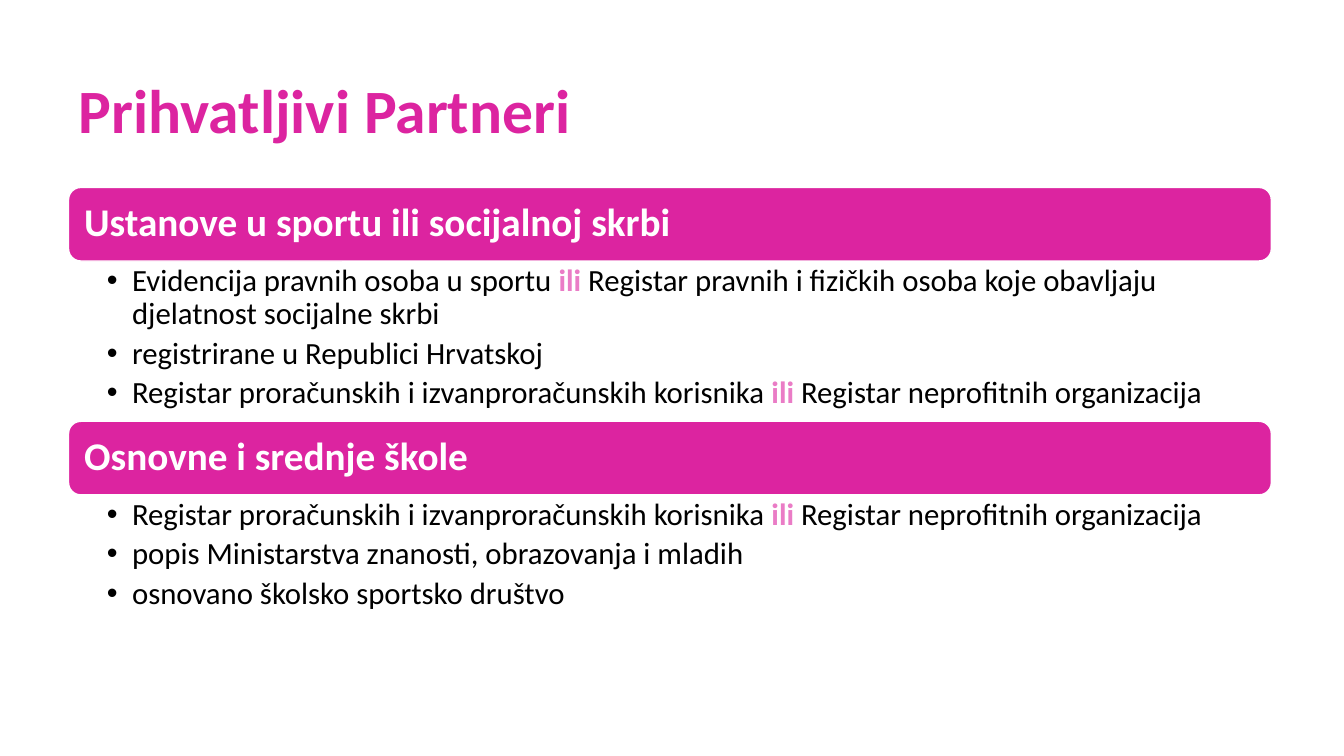
from dataclasses import dataclass

from lxml.etree import SubElement
from pptx import Presentation
from pptx.dml.color import RGBColor
from pptx.enum.shapes import MSO_SHAPE
from pptx.enum.text import MSO_ANCHOR, MSO_AUTO_SIZE, PP_ALIGN
from pptx.oxml.ns import qn
from pptx.shapes.base import BaseShape
from pptx.slide import Slide
from pptx.text.text import TextFrame, _Paragraph, _Run
from pptx.util import Inches, Pt


@dataclass(frozen=True)
class Theme:
    font: str = "Calibri"
    pink: RGBColor = RGBColor(0xDC, 0x24, 0xA0)
    light: RGBColor = RGBColor(0xEA, 0x7C, 0xC6)
    white: RGBColor = RGBColor(0xFF, 0xFF, 0xFF)
    black: RGBColor = RGBColor(0, 0, 0)
    title: int = 44
    head: int = 28
    body: int = 22


@dataclass(frozen=True)
class Group:
    head: str
    items: tuple[str, ...]
    top: float
    height: float


THEME = Theme()
LEFT, WIDTH, BAR = 0.68, 11.93, 0.73
WORD = "ili"
FUNDS = ("Registar proračunskih i izvanproračunskih korisnika ili "
         "Registar neprofitnih organizacija")
GROUPS = (
    Group("Ustanove u sportu ili socijalnoj skrbi", (
        "Evidencija pravnih osoba u sportu ili Registar pravnih i fizičkih "
        "osoba koje obavljaju djelatnost socijalne skrbi",
        "registrirane u Republici Hrvatskoj",
        FUNDS,
    ), 1.86, 1.58),
    Group("Osnovne i srednje škole", (
        FUNDS,
        "popis Ministarstva znanosti, obrazovanja i mladih",
        "osnovano školsko sportsko društvo",
    ), 4.18, 1.24),
)


def place(shape: BaseShape, left: float, top: float,
          width: float, height: float) -> None:
    shape.left, shape.top = Inches(left), Inches(top)
    shape.width, shape.height = Inches(width), Inches(height)


def style(run: _Run, size: int, color: RGBColor, bold: bool) -> None:
    run.font.name = THEME.font
    run.font.size = Pt(size)
    run.font.color.rgb = color
    run.font.bold = bold


def frame(shape: BaseShape, anchor: MSO_ANCHOR, left: float,
          right: float, edge: float) -> TextFrame:
    text = shape.text_frame
    text.word_wrap = True
    text.auto_size = MSO_AUTO_SIZE.NONE
    text.vertical_anchor = anchor
    text.margin_left, text.margin_right = Inches(left), Inches(right)
    text.margin_top = text.margin_bottom = Inches(edge)
    return text


def space(para: _Paragraph, after: float = 0) -> None:
    para.alignment = PP_ALIGN.LEFT
    para.line_spacing = 0.9
    para.space_before = Pt(0)
    para.space_after = Pt(after)


def line(text: TextFrame, words: str, size: int, color: RGBColor) -> None:
    text.text = words
    para = text.paragraphs[0]
    space(para)
    style(para.runs[0], size, color, True)


def bullet(para: _Paragraph) -> None:
    props = para._p.get_or_add_pPr()
    props.set("marL", str(Inches(0.25)))
    props.set("indent", str(-Inches(0.25)))
    SubElement(props, qn("a:buFont")).set("typeface", "Arial")
    SubElement(props, qn("a:buChar")).set("char", "•")


def fill(para: _Paragraph, item: str) -> None:
    bullet(para)
    space(para, THEME.body * 0.2)
    before, word, after = item.partition(f" {WORD} ")
    if not word:
        para.text = item
        style(para.runs[0], THEME.body, THEME.black, False)
        return
    parts = ((f"{before} ", THEME.black, False),
             (WORD, THEME.light, True),
             (f" {after}", THEME.black, False))
    for words, color, bold in parts:
        run = para.add_run()
        run.text = words
        style(run, THEME.body, color, bold)


def draw(slide: Slide, group: Group, body: BaseShape) -> None:
    bar = slide.shapes.add_shape(
        MSO_SHAPE.ROUNDED_RECTANGLE, Inches(LEFT), Inches(group.top),
        Inches(WIDTH), Inches(BAR))
    bar.shadow.inherit = False
    bar.fill.solid()
    bar.fill.fore_color.rgb = THEME.pink
    bar.line.color.rgb = THEME.white
    bar.line.width = Pt(1)
    text = frame(bar, MSO_ANCHOR.MIDDLE, 0.12, 0.12, 0.12)
    line(text, group.head, THEME.head, THEME.white)

    place(body, LEFT, group.top + BAR, WIDTH, group.height)
    text = frame(body, MSO_ANCHOR.TOP, 0.38, 0.22, 0.04)
    for spot, item in enumerate(group.items):
        para = text.add_paragraph() if spot else text.paragraphs[0]
        fill(para, item)


def main() -> None:
    deck = Presentation()
    deck.slide_width, deck.slide_height = Inches(13.33), Inches(7.5)
    slide = deck.slides.add_slide(deck.slide_layouts.get_by_name("Two Content"))
    title, *bodies = slide.placeholders
    place(title, LEFT, 0.4, 10.57, 1.45)
    text = frame(title, MSO_ANCHOR.MIDDLE, 0.1, 0.1, 0.05)
    line(text, "Prihvatljivi Partneri", THEME.title, THEME.pink)
    for group, body in zip(GROUPS, bodies):
        draw(slide, group, body)
    deck.save("out.pptx")


if __name__ == "__main__":
    main()
